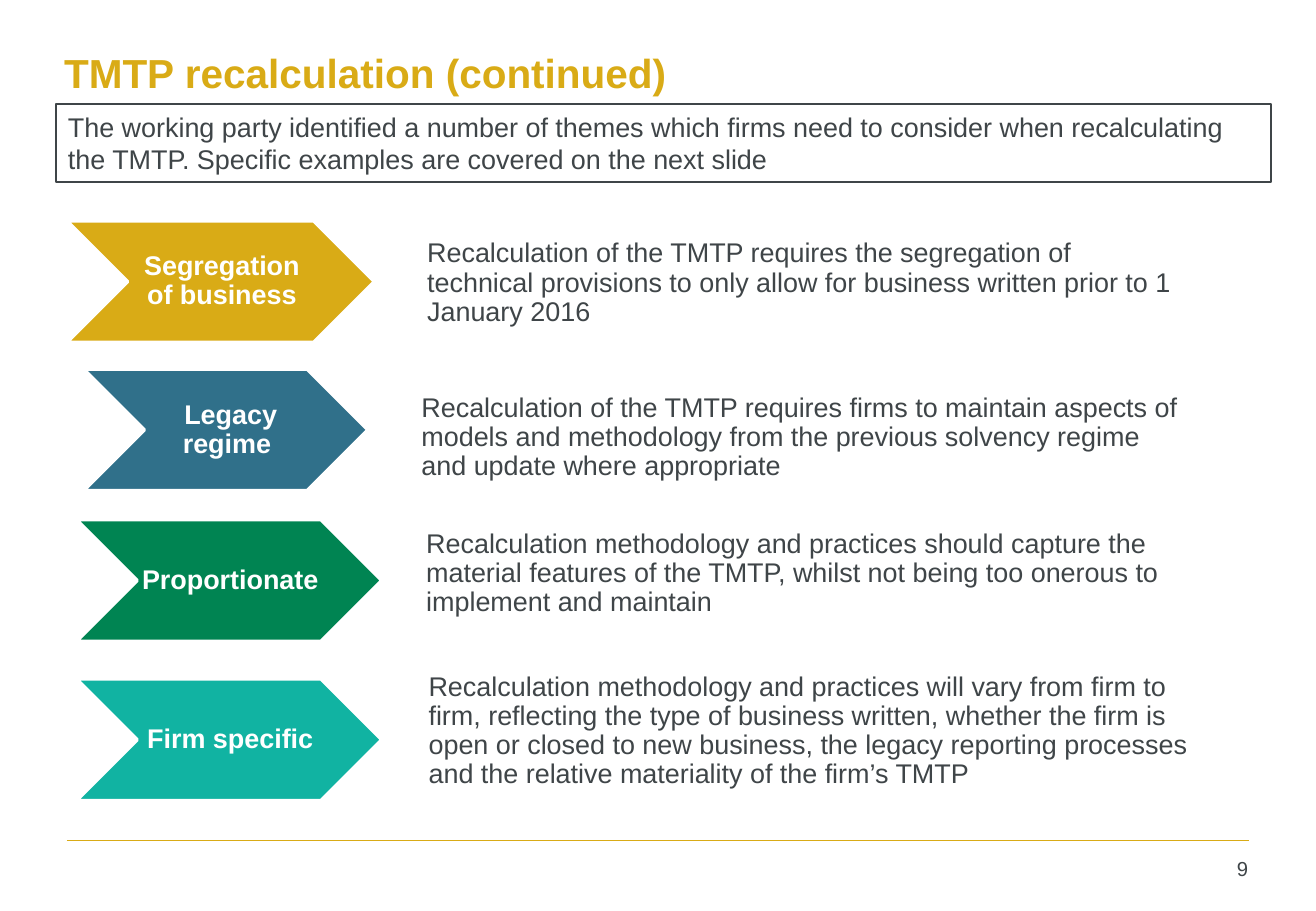
from lxml.etree import SubElement
from pptx import Presentation
from pptx.dml.color import RGBColor
from pptx.enum.shapes import MSO_CONNECTOR as LINE, MSO_SHAPE as SHAPE
from pptx.enum.text import MSO_ANCHOR as ANCHOR, PP_ALIGN as ALIGN
from pptx.oxml.ns import qn
from pptx.util import Cm, Pt

GOLD = RGBColor(0xD9, 0xAB, 0x16)
BLUE = RGBColor(0x30, 0x70, 0x8A)
GREEN = RGBColor(0x00, 0x84, 0x52)
TEAL = RGBColor(0x11, 0xB3, 0xA2)
GREY = RGBColor(0x3F, 0x45, 0x48)
WHITE = RGBColor(0xFF, 0xFF, 0xFF)

INTRO = ("The working party identified a number of themes which firms need to consider "
         "when recalculating the TMTP. Specific examples are covered on the next slide")
THEMES = [
    ("Segregation of business", GOLD, (1.4, 4.62, 6.43, 2.54), (8.43, 4.45, 16.74, 2.95),
     "Recalculation of the TMTP requires the segregation of technical provisions to only "
     "allow for business written prior to 1 January 2016"),
    (" Legacy regime", BLUE, (1.75, 7.72, 5.94, 2.54), (8.31, 7.87, 17.09, 2.57),
     "Recalculation of the TMTP requires firms to maintain aspects of models and "
     "methodology from the previous solvency regime and update where appropriate"),
    ("Proportionate", GREEN, (1.6, 10.87, 6.38, 2.54), (8.41, 10.52, 16.33, 2.95),
     "Recalculation methodology and practices should capture the material features of "
     "the TMTP, whilst not being too onerous to implement and maintain"),
    ("Firm specific", TEAL, (1.6, 14.2, 6.38, 2.54), (8.46, 13.82, 17.25, 2.95),
     "Recalculation methodology and practices will vary from firm to firm, reflecting the "
     "type of business written, whether the firm is open or closed to new business, the "
     "legacy reporting processes and the relative materiality of the firm’s TMTP"),
]


def cms(values):
    """Turn a row of numbers into centimetre lengths."""
    return [Cm(v) for v in values]


def write(shape, text, size=16, color=GREY, bold=False, align=ALIGN.LEFT,
          anchor=ANCHOR.MIDDLE, insets=(0.25, 0.13, 0.25, 0.13), spacing=1.0):
    """Fill a shape with one formatted paragraph."""
    tf = shape.text_frame
    tf.word_wrap = True
    tf.vertical_anchor = anchor
    tf.margin_left, tf.margin_top, tf.margin_right, tf.margin_bottom = cms(insets)
    p = tf.paragraphs[0]
    p.text = text
    p.alignment = align
    p.line_spacing = spacing
    font = p.runs[0].font
    font.name, font.size, font.bold = "Arial", Pt(size), bold
    font.color.rgb = color


def add_text(s, box, text, **style):
    """Add a text box."""
    write(s.shapes.add_textbox(*cms(box)), text, **style)


def add_block(s, kind, box, line, width, fill=None):
    """Add an outlined shape, filled if a colour is given."""
    sp = s.shapes.add_shape(kind, *cms(box))
    sp.shadow.inherit = False
    sp.line.color.rgb = line
    sp.line.width = Pt(width)
    if fill is None:
        sp.fill.background()
    else:
        sp.fill.solid()
        sp.fill.fore_color.rgb = fill
    return sp


def add_theme(s, label, color, arrow_box, text_box, text):
    """Add a labelled chevron and its explanation."""
    chevron = add_block(s, SHAPE.CHEVRON, arrow_box, WHITE, 2, color)
    write(chevron, label, color=WHITE, bold=True, align=ALIGN.CENTER,
          insets=(0.05, 0.03, 0, 0.03), spacing=0.9)
    add_text(s, text_box, text, insets=(0.5, 0.03, 0.5, 0.03), spacing=0.9)


def add_rule(s, left, right, y):
    """Add the horizontal footer line."""
    rule = s.shapes.add_connector(LINE.STRAIGHT, *cms((left, y, right, y)))
    rule.line.color.rgb = GOLD
    rule.line.width = Pt(1)
    SubElement(rule._element.spPr, qn("a:effectLst"))


def main():
    """Build the slide and save it."""
    prs = Presentation()
    prs.slide_width, prs.slide_height = Cm(27.51), Cm(19.05)
    s = prs.slides.add_slide(prs.slide_layouts[6])
    add_rule(s, 1.4, 26.11, 17.58)
    add_text(s, (1.09, -0.08, 24.94, 3.18), "TMTP recalculation (continued)",
             size=24, color=GOLD, bold=True)
    add_text(s, (24.38, 17.78, 1.96, 0.94), "9", size=12, align=ALIGN.RIGHT,
             anchor=ANCHOR.TOP)
    for theme in THEMES:
        add_theme(s, *theme)
    intro = add_block(s, SHAPE.RECTANGLE, (1.17, 2.18, 25.4, 1.63), GREY, 1.25)
    write(intro, INTRO, anchor=ANCHOR.TOP)
    prs.save("out.pptx")


if __name__ == "__main__":
    main()
